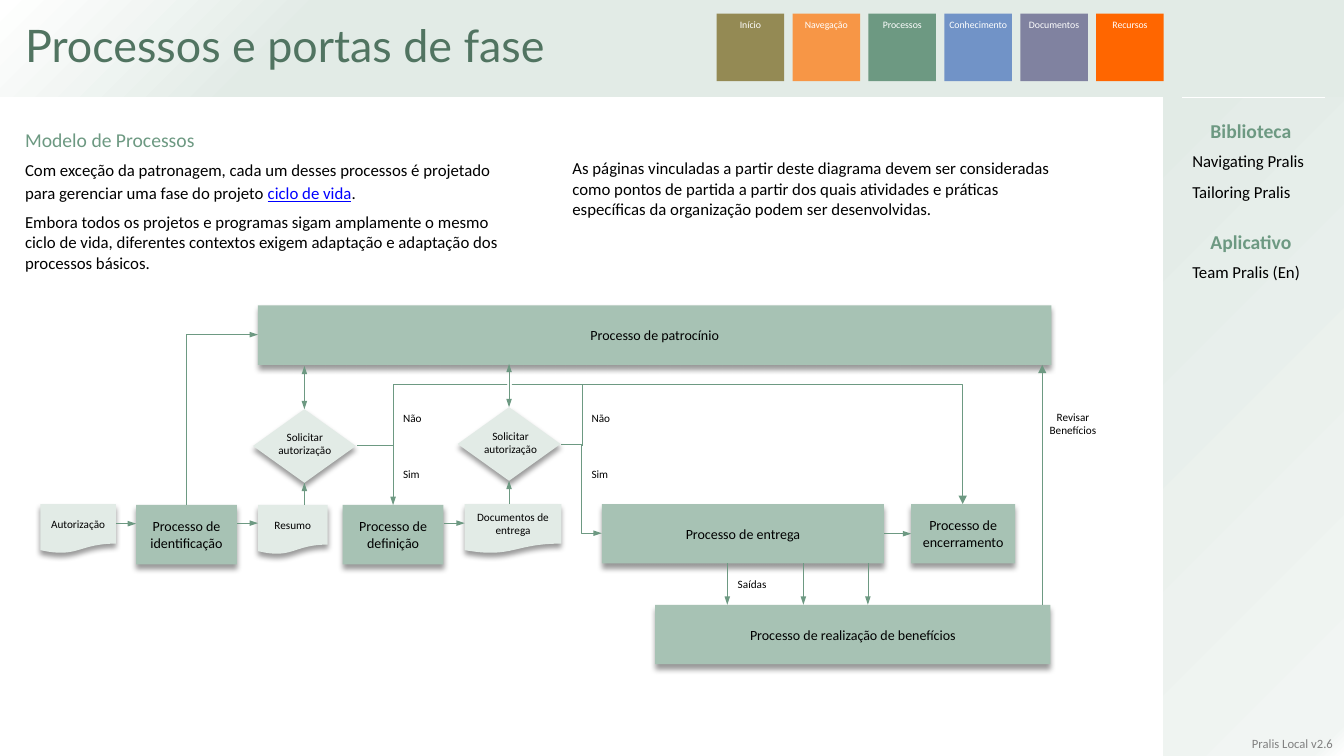
from dataclasses import dataclass
from typing import Optional

from lxml.etree import SubElement
from pptx import Presentation
from pptx.dml.color import RGBColor
from pptx.enum.shapes import MSO_CONNECTOR, MSO_SHAPE
from pptx.enum.text import MSO_ANCHOR, PP_ALIGN
from pptx.oxml.ns import qn
from pptx.util import Inches, Pt

CELL = Inches(0.1)
COLUMNS, ROWS = 133.33, 75

BLACK = RGBColor(0x00, 0x00, 0x00)
WHITE = RGBColor(0xFF, 0xFF, 0xFF)
GRAY = RGBColor(0x80, 0x80, 0x80)
LINK = RGBColor(0x00, 0x00, 0xFF)
GREEN = RGBColor(0x6D, 0x99, 0x82)
DARK_GREEN = RGBColor(0x51, 0x74, 0x61)
MID_GREEN = RGBColor(0xA7, 0xC2, 0xB4)
PALE_GREEN = RGBColor(0xE2, 0xEB, 0xE6)
MIST = RGBColor(0xF1, 0xF5, 0xF3)
OLIVE = RGBColor(0x94, 0x8A, 0x54)
AMBER = RGBColor(0xF7, 0x96, 0x46)
BLUE = RGBColor(0x71, 0x93, 0xC7)
VIOLET = RGBColor(0x80, 0x82, 0xA0)
ORANGE = RGBColor(0xFF, 0x66, 0x00)

RECT, DOCUMENT, DECISION = (
    MSO_SHAPE.RECTANGLE, MSO_SHAPE.FLOWCHART_DOCUMENT, MSO_SHAPE.FLOWCHART_DECISION)
TOP, LEFT, BOTTOM, RIGHT = range(4)


@dataclass(frozen=True)
class Area:
    col: float
    row: float
    cols: float
    rows: float

    def emu(self) -> list:
        return [round(v * CELL) for v in (self.col, self.row, self.cols, self.rows)]


@dataclass(frozen=True)
class Run:
    text: str
    size: float = 12
    color: RGBColor = BLACK
    font: str = "Calibri"
    bold: bool = False
    underline: bool = False


@dataclass(frozen=True)
class Step:
    key: str
    kind: MSO_SHAPE
    area: Area
    label: str = ""


@dataclass(frozen=True)
class Caption:
    runs: list
    area: Area
    wrap: bool = True
    align: PP_ALIGN = PP_ALIGN.LEFT


@dataclass(frozen=True)
class Flow:
    begin: tuple
    end: tuple
    bend: str = "straight"
    ends: tuple = ("tailEnd",)
    source: Optional[tuple] = None
    target: Optional[tuple] = None
    head: str = "sm"


def write(frame, paragraphs: list, align=PP_ALIGN.LEFT, after: float = 0, **frame_format) -> None:
    for attribute, value in frame_format.items():
        setattr(frame, attribute, value)
    for index, runs in enumerate(paragraphs):
        paragraph = frame.add_paragraph() if index else frame.paragraphs[0]
        paragraph.alignment = align
        paragraph.space_after = Pt(after)
        for item in runs:
            run = paragraph.add_run()
            run.text = item.text
            font_format = {"size": Pt(item.size), "name": item.font,
                           "bold": item.bold, "underline": item.underline}
            for attribute, value in font_format.items():
                setattr(run.font, attribute, value)
            run.font.color.rgb = item.color


def draw_block(slide, kind, area: Area, color: RGBColor):
    block = slide.shapes.add_shape(kind, *area.emu())
    block.shadow.inherit = False
    block.line.fill.background()
    block.fill.solid()
    block.fill.fore_color.rgb = color
    return block


def draw_gradient(slide, area: Area, stops: list) -> None:
    band = draw_block(slide, RECT, area, PALE_GREEN)
    band.fill.gradient()
    band.fill.gradient_angle = 135
    stop_list = band._element.spPr.find(".//" + qn("a:gsLst"))
    stop_list.clear()
    for percent, color in stops:
        stop = SubElement(stop_list, qn("a:gs"), pos=str(percent * 1000))
        SubElement(stop, qn("a:srgbClr"), val=str(color))


def draw_step(slide, step: Step):
    process = step.kind == RECT
    block = draw_block(slide, step.kind, step.area, MID_GREEN if process else PALE_GREEN)
    effects = block._element.spPr.find(qn("a:effectLst"))
    shadow = SubElement(effects, qn("a:outerShdw"), blurRad=str(Pt(4)), dist=str(Pt(3)),
                        dir="5400000", algn="t", rotWithShape="0")
    SubElement(SubElement(shadow, qn("a:srgbClr"), val=str(BLACK)), qn("a:alpha"), val="40000")
    if step.label:
        write(block.text_frame, [[Run(step.label, 10 if process else 8)]], PP_ALIGN.CENTER,
              word_wrap=True, vertical_anchor=MSO_ANCHOR.MIDDLE)
    return block


def draw_caption(slide, caption: Caption, after: float = 0, **frame_format):
    box = slide.shapes.add_textbox(*caption.area.emu())
    write(box.text_frame, caption.runs, caption.align, after, word_wrap=caption.wrap, **frame_format)
    return box


def draw_flow(slide, flow: Flow, steps: dict, color=GREEN, width: float = 0.5) -> None:
    (x1, y1), (x2, y2) = flow.begin, flow.end
    if flow.bend == "rise":
        cx, cy, dx, dy = (x1 + x2) / 2, (y1 + y2) / 2, (x1 - x2) / 2, (y1 - y2) / 2
        x1, y1, x2, y2 = cx + dy, cy - dx, cx - dy, cy + dx
    kind = MSO_CONNECTOR.STRAIGHT if flow.bend == "straight" else MSO_CONNECTOR.ELBOW
    arrow = slide.shapes.add_connector(kind, *[round(v * CELL) for v in (x1, y1, x2, y2)])
    arrow.line.color.rgb = color
    arrow.line.width = Pt(width)
    properties = arrow._element.spPr
    SubElement(properties, qn("a:effectLst"))
    if flow.bend in ("corner", "rise"):
        properties.find(qn("a:prstGeom")).set("prst", "bentConnector2")
    if flow.bend == "rise":
        properties.find(qn("a:xfrm")).set("rot", "5400000")
    for end in flow.ends:
        SubElement(properties.find(qn("a:ln")), qn("a:" + end), type="triangle", w=flow.head)
    for join, place in ((arrow.begin_connect, flow.source), (arrow.end_connect, flow.target)):
        if place:
            join(steps[place[0]], place[1])


NAVIGATION = [("Início", OLIVE), ("Navegação", AMBER), ("Processos", GREEN),
              ("Conhecimento", BLUE), ("Documentos", VIOLET), ("Recursos", ORANGE)]
STEPS = [
    Step("brief check", DECISION, Area(25.1, 40.6, 10.2, 7.3)),
    Step("delivery check", DECISION, Area(45.4, 40.4, 10.2, 7.3)),
    Step("identification", RECT, Area(13.5, 50.1, 10, 5.9), "Processo de identificação"),
    Step("definition", RECT, Area(34, 50.1, 10, 5.9), "Processo de definição"),
    Step("delivery", RECT, Area(59.7, 50, 28, 5.9), "Processo de entrega"),
    Step("closure", RECT, Area(90.4, 50, 10.3, 5.9), "Processo de encerramento"),
    Step("sponsorship", RECT, Area(25.6, 30.3, 78.7, 5.9), "Processo de patrocínio"),
    Step("benefits", RECT, Area(65, 60, 39.2, 5.9), "Processo de realização de benefícios"),
    Step("mandate", DOCUMENT, Area(4, 50, 7.5, 4.9), "Autorização"),
    Step("brief", DOCUMENT, Area(25.6, 50.1, 6.9, 4.9), "Resumo"),
    Step("documents", DOCUMENT, Area(46.1, 50, 9.6, 4.9), "Documentos de entrega"),
]
FLOWS = [
    Flow((11.5, 51.95), (13.5, 51.95)),
    Flow((23.5, 51.9), (25.6, 51.9)),
    Flow((44, 51.9), (46.1, 51.9)),
    Flow((30.2, 50.1), (30.2, 47.9), target=("brief check", BOTTOM)),
    Flow((50.5, 50), (50.5, 47.7), target=("delivery check", BOTTOM)),
    Flow((87.7, 52.95), (90.4, 52.95), source=("delivery", RIGHT), target=("closure", LEFT)),
    Flow((103.4, 60), (103.4, 36.2), head="med"),
    *[Flow((col, 55.9), (col, 60)) for col in (72.15, 79.7, 86.1)],
    Flow((18.5, 50.1), (25.6, 33.2), "rise"),
    Flow((55.7, 44.1), (59.7, 52.9), "elbow"),
    Flow((35.4, 44.2), (39, 50.1), "corner"),
    Flow((39, 38.15), (95.5, 50), "corner", head="med"),
    Flow((39, 44.2), (39, 38.15), ends=()),
    Flow((57.8, 44.2), (57.8, 38.15), ends=()),
]
BOTH = ("headEnd", "tailEnd")
GATES = [Flow((30.2, 40.6), (30.2, 36.3), ends=BOTH, source=("brief check", TOP)),
         Flow((50.5, 40.4), (50.5, 36.1), ends=BOTH, source=("delivery check", TOP))]
CAPTIONS = [
    *[Caption([[Run(text, 8)]], Area(col, row, 8.3, 3.7), align=PP_ALIGN.CENTER)
      for text, col, row in (("Solicitar autorização", 26.1, 42.2),
                             ("Solicitar autorização", 46.5, 42.1),
                             ("Revisar Benefícios", 102.3, 40.2))],
    *[Caption([[Run(text, 8)]], Area(col, row, cols, 2.4), False)
      for text, col, row, cols in (("Não", 39, 40.3, 3.9), ("Sim", 39, 45.9, 3.7),
                                   ("Não", 57.7, 40.3, 3.9), ("Sim", 57.7, 45.9, 3.7),
                                   ("Saídas", 72.2, 56.8, 4.9))],
    Caption([[Run("As páginas vinculadas a partir deste diagrama devem ser consideradas como pontos de "
                  "partida a partir dos quais atividades e práticas específicas da organização podem "
                  "ser desenvolvidas.")]], Area(55.8, 15.2, 50.2, 7.1)),
    *[Caption([[Run(text, 14, GREEN, bold=True)]], Area(115.4, row, 17.4, 3.4), align=PP_ALIGN.CENTER)
      for text, row in (("Biblioteca", 11.3), ("Aplicativo", 22.3))],
    *[Caption([[Run(text)]], Area(117.3, row, 15, 3))
      for text, row in (("Navigating Pralis", 14.5), ("Tailoring Pralis", 17.5),
                        ("Team Pralis (En)", 25.5))],
    Caption([[Run("Pralis Local v2.6", 9, GRAY)]], Area(121, 72.5, 12.2, 2.5), align=PP_ALIGN.RIGHT),
]
INTRODUCTION = Caption([
    [Run("Modelo de Processos", 14, GREEN)],
    [Run("Com exceção da patronagem, cada um desses processos é projetado para gerenciar uma fase "
         "do projeto "), Run("ciclo de vida", color=LINK, underline=True), Run("."), Run(" ", 14)],
    [Run("Embora todos os projetos e programas sigam amplamente o mesmo ciclo de vida, diferentes "
         "contextos exigem adaptação e adaptação dos processos básicos.")],
], Area(1.5, 12.2, 50.2, 18.7))
TITLE = Caption([[Run("Processos e portas de fase", 32, DARK_GREEN, "Lato")]], Area(1.5, 0.3, 68.8, 9))


def main() -> None:
    deck = Presentation()
    deck.slide_width, deck.slide_height = round(COLUMNS * CELL), ROWS * CELL
    slide = deck.slides.add_slide(deck.slide_layouts[6])
    draw_gradient(slide, Area(115.4, 6.5, 17.93, 68.5), [(0, WHITE), (4, MIST), (99, PALE_GREEN)])
    draw_gradient(slide, Area(0, 0, COLUMNS, 9.6), [(77, PALE_GREEN), (100, WHITE)])
    draw_flow(slide, Flow((117.3, 9.65), (131.4, 9.65), ends=()), {}, WHITE, 1)
    for index, (label, color) in enumerate(NAVIGATION):
        tile = draw_block(slide, RECT, Area(71.1 + 7.53 * index, 1.35, 6.7, 6.7), color)
        write(tile.text_frame, [[Run(label, 7, WHITE)]], PP_ALIGN.CENTER, word_wrap=True,
              vertical_anchor=MSO_ANCHOR.TOP, margin_left=0, margin_right=0)
    steps = {step.key: draw_step(slide, step) for step in STEPS}
    for flow in FLOWS:
        draw_flow(slide, flow, steps)
    draw_block(slide, MSO_SHAPE.OVAL, Area(50.3, 38, 0.5, 0.5), WHITE)
    for gate in GATES:
        draw_flow(slide, gate, steps)
    for caption in CAPTIONS:
        draw_caption(slide, caption)
    draw_caption(slide, INTRODUCTION, 6)
    title = draw_caption(slide, TITLE, vertical_anchor=MSO_ANCHOR.MIDDLE)
    title.text_frame.paragraphs[0].line_spacing = 0.9
    deck.save("out.pptx")


if __name__ == "__main__":
    main()
